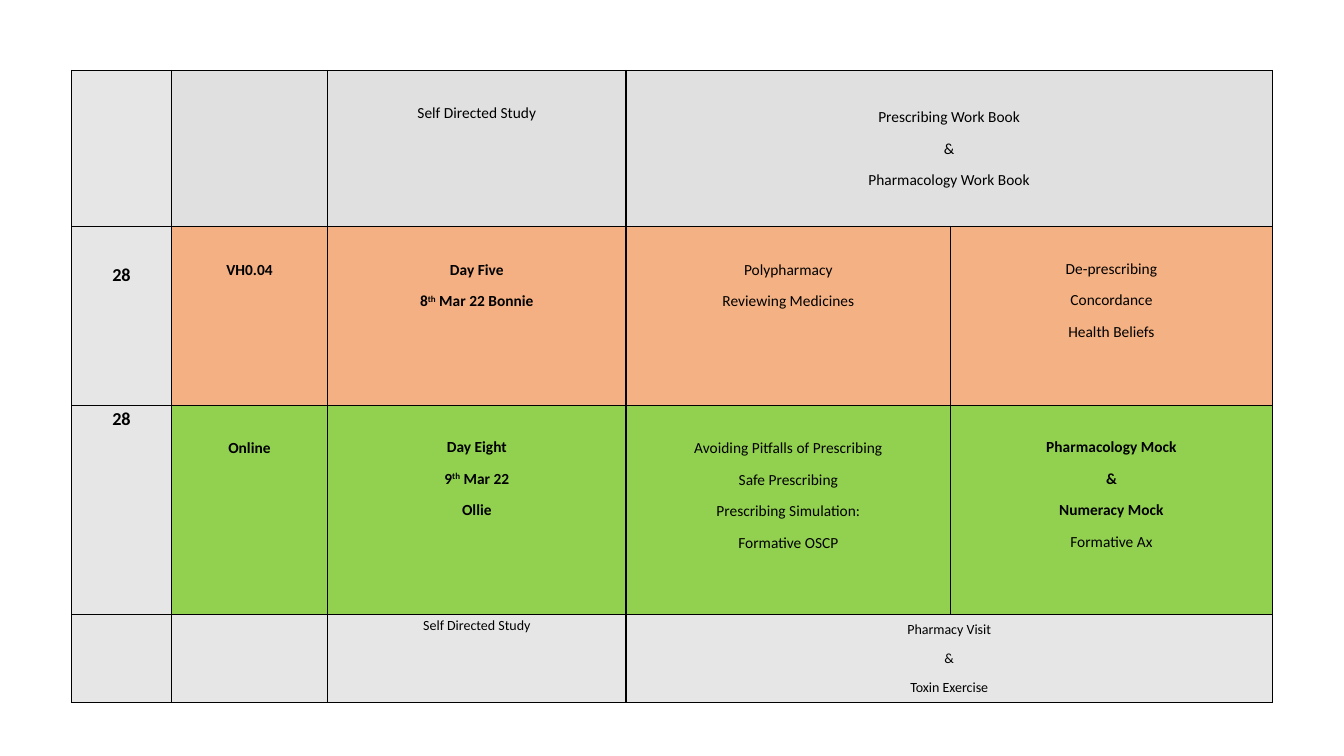
from lxml import etree
from pptx import Presentation
from pptx import util as u
from pptx.dml.color import RGBColor
from pptx.enum import text
from pptx.oxml.ns import qn

theme = {
    "font": "Calibri", "ink": "000000", "line": 1,
    "week": 13, "body": 11, "small": 10,
    "side": "E7E6E6", "study": "E0E0E0", "visit": "E6E6E6",
    "peach": "F4B083", "apricot": "F4B183", "green": "92D050",
}


def write(cell, lines, size="body", bold=False, top=0.32, side=0.07):
    cell.margin_left = cell.margin_right = u.Inches(side)
    cell.margin_top, cell.margin_bottom = u.Inches(top), 0
    frame = cell.text_frame
    for i, line in enumerate(lines):
        para = frame.add_paragraph() if i else frame.paragraphs[0]
        para.alignment = text.PP_ALIGN.CENTER
        para.line_spacing = 1.07
        para.space_after = u.Pt(8)
        for j, part in enumerate(line.split("^")):
            run = para.add_run()
            run.text = part
            run.font.name = theme["font"]
            run.font.size = u.Pt(theme[size])
            run.font.bold = bold
            run.font.color.rgb = RGBColor.from_string(theme["ink"])
            if j % 2:
                run.font._element.set("baseline", "30000")


def paint(cell, fill):
    props = cell._tc.get_or_add_tcPr()
    for edge in ("a:lnL", "a:lnR", "a:lnT", "a:lnB"):
        line = etree.SubElement(props, qn(edge), w=str(u.Pt(theme["line"])))
        solid = etree.SubElement(line, qn("a:solidFill"))
        etree.SubElement(solid, qn("a:srgbClr"), val=theme["ink"])
    cell.fill.solid()
    cell.fill.fore_color.rgb = RGBColor.from_string(theme[fill])


deck = Presentation()
deck.slide_width, deck.slide_height = u.Inches(13.33), u.Inches(7.5)
slide = deck.slides.add_slide(deck.slide_layouts[6])

cols = [0.99, 1.55, 2.96, 3.22, 3.19]
rows = [1.55, 1.77, 2.08, 0.87]
fills = [
    ["side"] + ["study"] * 4,
    ["side"] + ["peach"] * 2 + ["apricot"] * 2,
    ["side"] + ["green"] * 4,
    ["visit"] * 5,
]

grid = slide.shapes.add_table(
    len(rows), len(cols), u.Inches(0.71), u.Inches(0.7),
    u.Inches(sum(cols)), u.Inches(sum(rows))).table
grid.first_row = grid.horz_banding = False
for col, wide in zip(grid.columns, cols):
    col.width = u.Inches(wide)
for row, high in zip(grid.rows, rows):
    row.height = u.Inches(high)
for r, tints in enumerate(fills):
    for c, tint in enumerate(tints):
        paint(grid.cell(r, c), tint)
for r in (0, 3):
    grid.cell(r, 3).merge(grid.cell(r, 4))

week = {"size": "week", "bold": True}
small = {"size": "small"}
plan = [
    (0, 2, ["Self Directed Study"], {}),
    (0, 3, ["Prescribing Work Book", "&", "Pharmacology Work Book"],
     {"top": 0.36, "side": 0.09}),
    (1, 0, ["28"], {**week, "top": 0.36}),
    (1, 1, ["VH0.04"], {"bold": True}),
    (1, 2, ["Day Five", "8^th^ Mar 22 Bonnie"], {"bold": True}),
    (1, 3, ["Polypharmacy", "Reviewing Medicines"], {}),
    (1, 4, ["De-prescribing", "Concordance", "Health Beliefs"], {"top": 0.31}),
    (2, 0, ["28"], {**week, "top": 0.01}),
    (2, 1, ["Online"], {"bold": True}),
    (2, 2, ["Day Eight", "9^th^ Mar 22", "Ollie"], {"bold": True, "top": 0.31}),
    (2, 3, ["Avoiding Pitfalls of Prescribing", "Safe Prescribing",
            "Prescribing Simulation:", "Formative OSCP"], {}),
    (2, 4, ["Pharmacology Mock", "&", "Numeracy Mock", "Formative Ax"],
     {"bold": True, "top": 0.31}),
    (3, 2, ["Self Directed Study"], {**small, "top": 0.01}),
    (3, 3, ["Pharmacy Visit", "&", "Toxin Exercise"],
     {**small, "top": 0.05, "side": 0.09}),
]
for r, c, lines, form in plan:
    write(grid.cell(r, c), lines, **form)
grid.cell(2, 4).text_frame.paragraphs[-1].runs[0].font.bold = False

deck.save("out.pptx")
